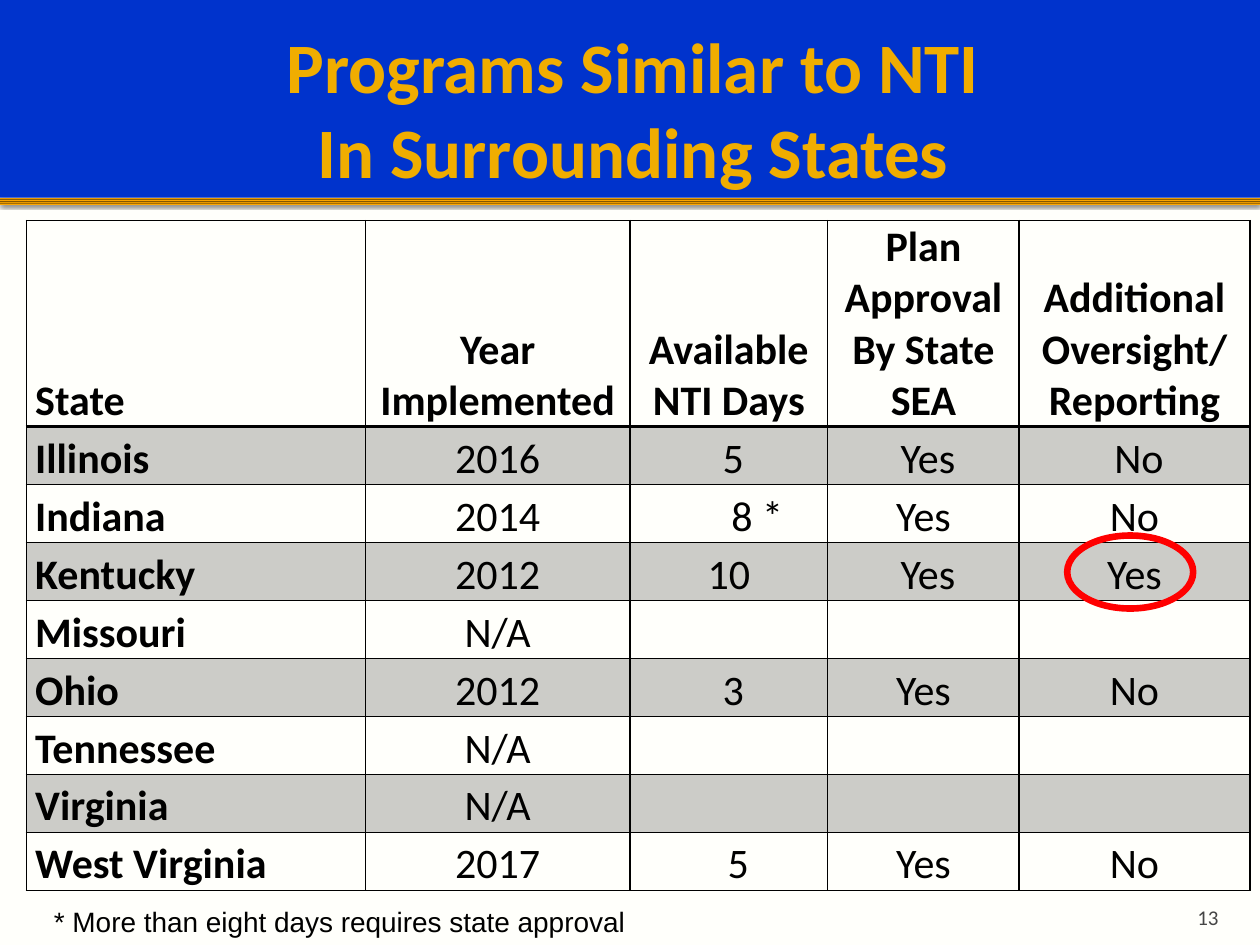
import pptx
import pptx.dml.color
import pptx.enum.shapes
import pptx.enum.text
import pptx.oxml
import pptx.oxml.ns
import pptx.util
from lxml import etree

Inches, Pt = pptx.util.Inches, pptx.util.Pt
Shape = pptx.enum.shapes.MSO_SHAPE
Align = pptx.enum.text.PP_ALIGN
Anchor = pptx.enum.text.MSO_ANCHOR
qn = pptx.oxml.ns.qn

COLORS = {"back": "FFFFFB", "blue": "0033CC", "gold": "F0AD00",
          "black": "000000", "gray": "454545", "red": "FF0000",
          "dark": "825600", "light": "FFA800"}
STOPS = [0, 13, 28, 43, 58, 72, 87, 100]
COLS = [2.69, 2.1, 1.57, 1.52, 1.83]
HEAD, ROW = 1.6, 0.46
ROWS = [
    ["State", "Year Implemented", "Available NTI Days",
     "Plan Approval\nBy State SEA", "Additional Oversight/\nReporting"],
    ["Illinois", "2016", "5", "Yes", "No"],
    ["Indiana", "2014", "8 *", "Yes", "No"],
    ["Kentucky", "2012", "10", "Yes", "Yes"],
    ["Missouri", "N/A", "", "", ""],
    ["Ohio", "2012", "3", "Yes", "No"],
    ["Tennessee", "N/A", "", "", ""],
    ["Virginia", "N/A", "", "", ""],
    ["West Virginia", "2017", "5", "Yes", "No"],
]
# Left indents, by row and column
INDENTS = {(1, 2): 0.07, (1, 3): 0.07, (1, 4): 0.07, (2, 2): 0.45,
           (3, 3): 0.07, (5, 2): 0.07, (8, 2): 0.15}


def color(name):
    return pptx.dml.color.RGBColor.from_string(COLORS[name])


def add(parent, tag, **attrs):
    return etree.SubElement(parent, qn(tag), attrs)


def style(frame, size, font, hue, bold=False, align=Align.LEFT):
    for para in frame.paragraphs:
        para.alignment = align
        para.font.size = Pt(size)
        para.font.name = font
        para.font.bold = bold
        para.font.color.rgb = color(hue)


def inset(item, left, top, right, bottom):
    item.margin_left, item.margin_top = Inches(left), Inches(top)
    item.margin_right, item.margin_bottom = Inches(right), Inches(bottom)


def add_shape(slide, kind, box, fill=None, line=None, width=1):
    shape = slide.shapes.add_shape(kind, *map(Inches, box))
    shape.shadow.inherit = False
    if fill:
        shape.fill.solid()
        shape.fill.fore_color.rgb = color(fill)
    else:
        shape.fill.background()
    if line:
        shape.line.color.rgb = color(line)
        shape.line.width = Pt(width)
    else:
        shape.line.fill.background()
    return shape


def add_stripe(slide):
    """Gold striped rule with a soft shadow below it."""
    stripe = add_shape(slide, Shape.RECTANGLE, (0, 1.57, 10, 0.05))
    stripe.fill.gradient()
    props = stripe.element.spPr
    grad = props.find(qn("a:gradFill"))
    for child in list(grad):
        grad.remove(child)
    stops = add(grad, "a:gsLst")
    for i, pos in enumerate(STOPS):
        stop = add(stops, "a:gs", pos=str(pos * 1000))
        add(stop, "a:srgbClr", val=COLORS["light" if i % 2 else "dark"])
    add(grad, "a:lin", ang="5400000", scaled="0")
    shade = add(props.find(qn("a:effectLst")), "a:outerShdw",
                blurRad=str(Pt(2.5)), dist=str(Pt(0.8)), dir="5400000",
                rotWithShape="0")
    hue = add(shade, "a:srgbClr", val=COLORS["black"])
    add(hue, "a:alpha", val="60000")


def add_title(slide):
    title = slide.shapes.title
    title.left, title.top = Inches(0.5), Inches(0.17)
    title.width, title.height = Inches(9), Inches(1.37)
    frame = title.text_frame
    frame.text = "Programs Similar to NTI\vIn Surrounding States"
    frame.vertical_anchor = Anchor.MIDDLE
    inset(frame, 0.1, 0.05, 0.05, 0.05)
    style(frame, 40.5, "Calibri", "gold", True, Align.CENTER)
    slide.shapes.element.append(title.element)  # in front of the bars


def add_text(slide, box, text, size, font, hue, align=Align.LEFT):
    frame = slide.shapes.add_textbox(*map(Inches, box)).text_frame
    frame.word_wrap = True
    frame.text = text
    style(frame, size, font, hue, align=align)
    return frame


def set_border(cell, bottom):
    props = cell._tc.get_or_add_tcPr()
    for i, side in enumerate("LRTB"):
        width = bottom if side == "B" else 1
        line = etree.Element(qn("a:ln" + side), w=str(Pt(width)))
        add(add(line, "a:solidFill"), "a:srgbClr", val=COLORS["black"])
        props.insert(i, line)


def fill_cell(cell, text, row, col):
    cell.text = text
    cell.vertical_anchor = Anchor.BOTTOM
    inset(cell, 0.07, 0.01, 0.07, 0)
    style(cell.text_frame, 24, "Calibri", "black", row == 0 or col == 0,
          Align.CENTER if col else Align.LEFT)
    if (row, col) in INDENTS:
        props = cell.text_frame.paragraphs[0]._p.get_or_add_pPr()
        props.set("marL", str(Inches(INDENTS[row, col])))
    if row % 2:
        cell.fill.solid()
        cell.fill.fore_color.rgb = color("black")
        hue = cell._tc.tcPr.find(".//" + qn("a:srgbClr"))
        add(hue, "a:alpha", val="20000")
    else:
        cell.fill.background()
    set_border(cell, 1 if row else 2)


def add_table(slide):
    high = HEAD + ROW * (len(ROWS) - 1)
    table = slide.shapes.add_table(
        len(ROWS), len(COLS), Inches(0.21), Inches(1.75),
        Inches(sum(COLS)), Inches(high)).table
    table.first_row = table.horz_banding = False
    for col, wide in zip(table.columns, COLS):
        col.width = Inches(wide)
    for r, texts in enumerate(ROWS):
        table.rows[r].height = Inches(ROW if r else HEAD)
        for c, text in enumerate(texts):
            fill_cell(table.cell(r, c), text, r, c)


def main():
    deck = pptx.Presentation()
    deck.slide_width, deck.slide_height = Inches(10), Inches(7.5)
    slide = deck.slides.add_slide(deck.slide_layouts[5])
    slide.background.fill.solid()
    slide.background.fill.fore_color.rgb = color("back")
    add_stripe(slide)
    add_shape(slide, Shape.RECTANGLE, (0, 0, 10, 1.57), "blue")
    add_title(slide)
    add_table(slide)
    page = add_text(slide, (8.97, 7.08, 0.8, 0.3), "13", 12, "Calibri",
                    "gray", Align.RIGHT)
    page.vertical_anchor = Anchor.BOTTOM
    inset(page, 0.1, 0.05, 0.1, 0)
    add_text(slide, (0.33, 7.13, 6.83, 0.37),
             "* More than eight days requires state approval",
             16, "Arial", "black")
    add_shape(slide, Shape.OVAL, (8.47, 4.25, 1, 0.58), line="red", width=3.78)
    deck.save("out.pptx")


if __name__ == "__main__":
    main()
